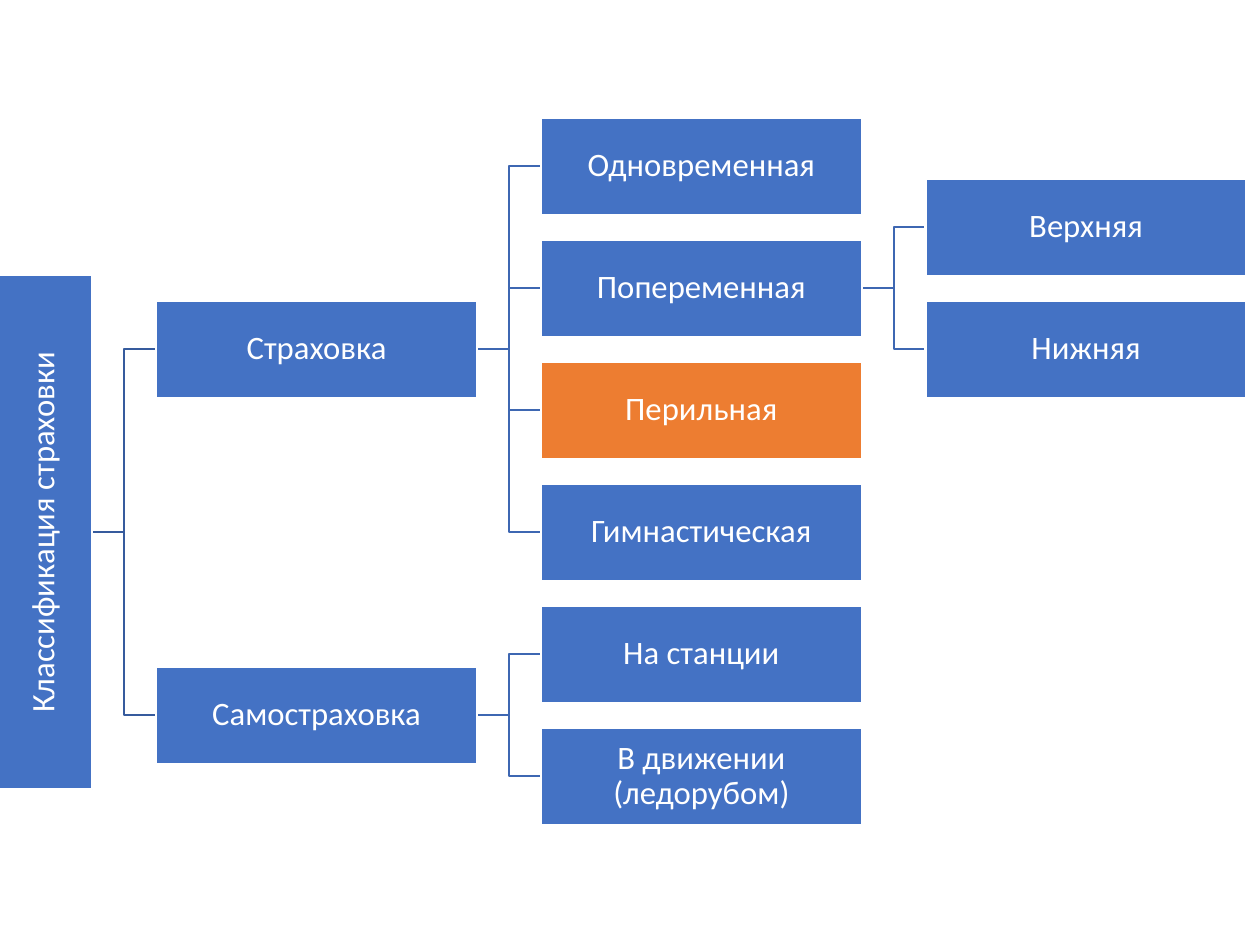
from lxml.etree import SubElement
from pptx import Presentation
from pptx.dml.color import RGBColor
from pptx.enum.shapes import MSO_CONNECTOR, MSO_SHAPE
from pptx.enum.text import MSO_ANCHOR, PP_ALIGN
from pptx.oxml.ns import qn
from pptx.util import Inches, Pt

COLORS = {
    "box": "4472C4",
    "accent": "ED7D31",
    "white": "FFFFFF",
    "root_line": "365B9D",
    "line": "3E67B2",
}
FONT = "Calibri"
SLIDE_WIDTH = Inches(7.5)
SLIDE_HEIGHT = SLIDE_WIDTH * 3 // 4
BOX_WIDTH, BOX_HEIGHT = Inches(1.91), Inches(0.58)
ROOT_HEIGHT = Inches(3.06)
COLUMN_GAP = Inches(0.38)
ROW_COUNT = 6
LEFT_SITE, RIGHT_SITE = 1, 3

ROOT = "Классификация страховки"
BRANCHES = [
    ("Страховка", ROOT, 0, 1.5),
    ("Самостраховка", ROOT, 0, 4.5),
    ("Одновременная", "Страховка", 1, 0),
    ("Попеременная", "Страховка", 1, 1),
    ("Перильная", "Страховка", 1, 2),
    ("Гимнастическая", "Страховка", 1, 3),
    ("На станции", "Самостраховка", 1, 4),
    ("В движении (ледорубом)", "Самостраховка", 1, 5),
    ("Верхняя", "Попеременная", 2, 0.5),
    ("Нижняя", "Попеременная", 2, 1.5),
]
HIGHLIGHTED = "Перильная"


def color(name):
    return RGBColor.from_string(COLORS[name])


def add_box(slide, text, left, center, width, height):
    shape = slide.shapes.add_shape(
        MSO_SHAPE.RECTANGLE, left, round(center - height / 2), width, height
    )
    shape.shadow.inherit = False
    shape.fill.solid()
    shape.fill.fore_color.rgb = color("accent" if text == HIGHLIGHTED else "box")
    shape.line.color.rgb = color("white")
    shape.line.width = Pt(1)
    frame = shape.text_frame
    frame.text = text
    frame.word_wrap = True
    frame.vertical_anchor = MSO_ANCHOR.MIDDLE
    frame.margin_left = frame.margin_right = Inches(0.01)
    frame.margin_top = frame.margin_bottom = Inches(0.01)
    paragraph = frame.paragraphs[0]
    paragraph.alignment = PP_ALIGN.CENTER
    paragraph.line_spacing = 0.9
    font = paragraph.runs[0].font
    font.name = FONT
    font.size = Pt(14)
    font.color.rgb = color("white")
    return shape


def add_link(slide, parent, child, line_color):
    connector = slide.shapes.add_connector(MSO_CONNECTOR.ELBOW, 0, 0, 0, 0)
    connector.begin_connect(parent, RIGHT_SITE)
    connector.end_connect(child, LEFT_SITE)
    connector.line.color.rgb = color(line_color)
    connector.line.width = Pt(1)
    SubElement(connector._element.spPr, qn("a:effectLst"))
    parent._element.getparent().insert(2, connector._element)


def add_tree(slide, left, top, height):
    row_step = (height - BOX_HEIGHT) / (ROW_COUNT - 1)
    first_center = top + BOX_HEIGHT / 2
    first_column = left + BOX_HEIGHT + COLUMN_GAP

    root = add_box(slide, ROOT, left, first_center + 3 * row_step,
                   BOX_HEIGHT, ROOT_HEIGHT)
    root.text_frame._txBody.bodyPr.set("vert", "vert270")
    boxes = {ROOT: root}
    for text, parent, level, row in BRANCHES:
        boxes[text] = add_box(
            slide, text, first_column + level * (BOX_WIDTH + COLUMN_GAP),
            first_center + row * row_step, BOX_WIDTH, BOX_HEIGHT,
        )
        add_link(slide, boxes[parent], boxes[text],
                 "root_line" if parent == ROOT else "line")


def main():
    presentation = Presentation()
    presentation.slide_width = SLIDE_WIDTH
    presentation.slide_height = SLIDE_HEIGHT
    slide = presentation.slides.add_slide(presentation.slide_layouts[6])
    add_tree(slide, Inches(-0.03), Inches(0.7), Inches(4.21))
    presentation.save("out.pptx")


if __name__ == "__main__":
    main()
